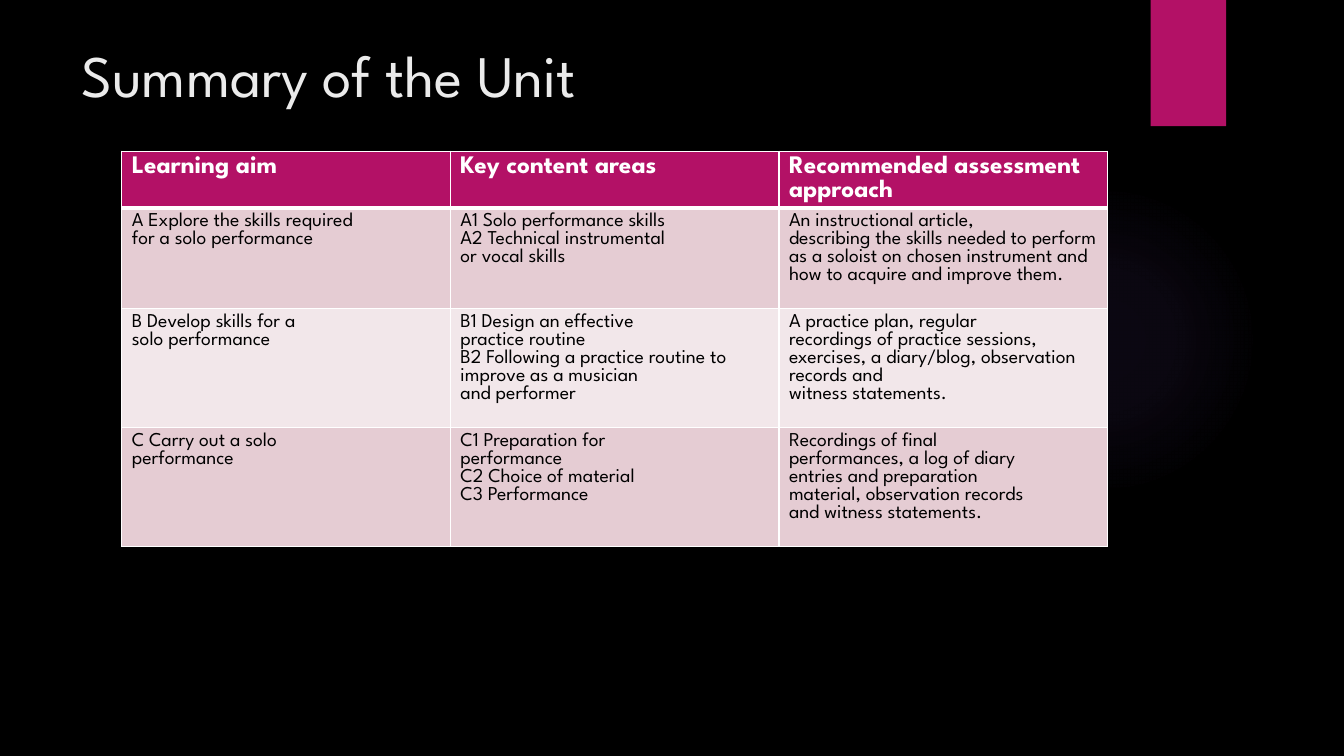
from dataclasses import dataclass

from lxml.etree import SubElement
from pptx import Presentation
from pptx.dml.color import RGBColor
from pptx.enum.shapes import MSO_SHAPE
from pptx.enum.text import MSO_ANCHOR
from pptx.oxml import parse_xml
from pptx.oxml.ns import nsdecls, qn
from pptx.util import Cm, Pt


@dataclass(frozen=True)
class Theme:
    font: str = "League Spartan"
    line_height: float = 0.92
    background: str = "000000"
    accent: str = "B31166"
    glow: str = "9B6BF2"
    title: str = "EBEBEB"
    header_text: str = "FFFFFF"
    body_text: str = "000000"
    border: str = "FFFFFF"
    bands: tuple = ("E5CCD3", "F2E7EA")
    title_size: int = 42
    header_size: int = 18
    body_size: int = 14


theme = Theme()

HEADERS = ["Learning aim", "Key content areas", "Recommended assessment approach"]
AIMS = [
    [
        ["A Explore the skills required", "for a solo performance"],
        ["A1 Solo performance skills", "A2 Technical instrumental", "or vocal skills"],
        ["An instructional article,",
         "describing the skills needed to perform as a soloist on chosen instrument "
         "and how to acquire and improve them."],
    ],
    [
        ["B Develop skills for a", "solo performance"],
        ["B1 Design an effective", "practice routine",
         "B2 Following a practice routine to improve as a musician", "and performer"],
        ["A practice plan, regular",
         "recordings of practice sessions, exercises, a diary/blog, observation records and",
         "witness statements."],
    ],
    [
        ["C Carry out a solo", "performance"],
        ["C1 Preparation for", "performance", "C2 Choice of material", "C3 Performance"],
        ["Recordings of final", "performances, a log of diary", "entries and preparation",
         "material, observation records", "and witness statements."],
    ],
]
ROW_HEIGHTS = [1.42, 2.54, 3, 3]
COLUMN_WIDTH = 8.28


def write_lines(text_frame, lines, size, color, bold=False):
    """Put each line in a paragraph of its own, with an exact line height."""
    for index, line in enumerate(lines):
        paragraph = text_frame.paragraphs[0] if index == 0 else text_frame.add_paragraph()
        paragraph.line_spacing = Pt(size * theme.line_height)
        run = paragraph.add_run()
        run.text = line
        run.font.name = theme.font
        run.font.size = Pt(size)
        run.font.bold = bold
        run.font.color.rgb = RGBColor.from_string(color)


def set_borders(cell, top, bottom):
    """Draw the four cell borders; top and bottom widths are in points."""
    properties = cell._tc.get_or_add_tcPr()
    for side, width in (("L", 1), ("R", 1), ("T", top), ("B", bottom)):
        line = SubElement(properties, qn(f"a:ln{side}"), w=str(Pt(width)))
        SubElement(SubElement(line, qn("a:solidFill")), qn("a:srgbClr"), val=theme.border)


presentation = Presentation()
presentation.slide_width = Cm(33.87)
presentation.slide_height = Cm(19.05)
slide = presentation.slides.add_slide(presentation.slide_layouts[6])
slide.background.fill.solid()
slide.background.fill.fore_color.rgb = RGBColor.from_string(theme.background)

# Soft glow behind the table
glow = slide.shapes.add_shape(MSO_SHAPE.OVAL, Cm(23.9), Cm(4.65), Cm(7.82), Cm(7.82))
glow.shadow.inherit = False
glow.line.fill.background()
stops = "".join(
    f'<a:gs pos="{position * 1000}"><a:srgbClr val="{theme.glow}">'
    f'<a:alpha val="{alpha * 1000}"/></a:srgbClr></a:gs>'
    for position, alpha in ((0, 7), (36, 6), (69, 0))
)
glow.element.spPr.find(qn("a:prstGeom")).addnext(parse_xml(
    f'<a:gradFill {nsdecls("a")}><a:gsLst>{stops}</a:gsLst><a:path path="circle">'
    '<a:fillToRect l="50000" t="50000" r="50000" b="50000"/></a:path></a:gradFill>'
))

# Corner tab
tab = slide.shapes.add_shape(MSO_SHAPE.RECTANGLE, Cm(29), Cm(0), Cm(1.9), Cm(3.18))
tab.shadow.inherit = False
tab.line.fill.background()
tab.fill.solid()
tab.fill.fore_color.rgb = RGBColor.from_string(theme.accent)

# Title
title = slide.shapes.add_textbox(Cm(1.8), Cm(1.27), Cm(26.14), Cm(3.89))
title.text_frame.word_wrap = True
title.text_frame.vertical_anchor = MSO_ANCHOR.TOP
write_lines(title.text_frame, ["Summary of the Unit"], theme.title_size, theme.title)

# Table of learning aims
table = slide.shapes.add_table(
    len(ROW_HEIGHTS), len(HEADERS), Cm(3.07), Cm(3.81),
    Cm(COLUMN_WIDTH * len(HEADERS)), Cm(sum(ROW_HEIGHTS)),
).table
for column in table.columns:
    column.width = Cm(COLUMN_WIDTH)
for row, height in zip(table.rows, ROW_HEIGHTS):
    row.height = Cm(height)

for column_index, header in enumerate(HEADERS):
    cell = table.cell(0, column_index)
    set_borders(cell, top=1, bottom=3)
    cell.fill.solid()
    cell.fill.fore_color.rgb = RGBColor.from_string(theme.accent)
    write_lines(cell.text_frame, [header], theme.header_size, theme.header_text, bold=True)

for row_index, aim in enumerate(AIMS, start=1):
    for column_index, lines in enumerate(aim):
        cell = table.cell(row_index, column_index)
        set_borders(cell, top=3 if row_index == 1 else 1, bottom=1)
        cell.fill.solid()
        cell.fill.fore_color.rgb = RGBColor.from_string(theme.bands[(row_index - 1) % 2])
        write_lines(cell.text_frame, lines, theme.body_size, theme.body_text)

presentation.save("out.pptx")
